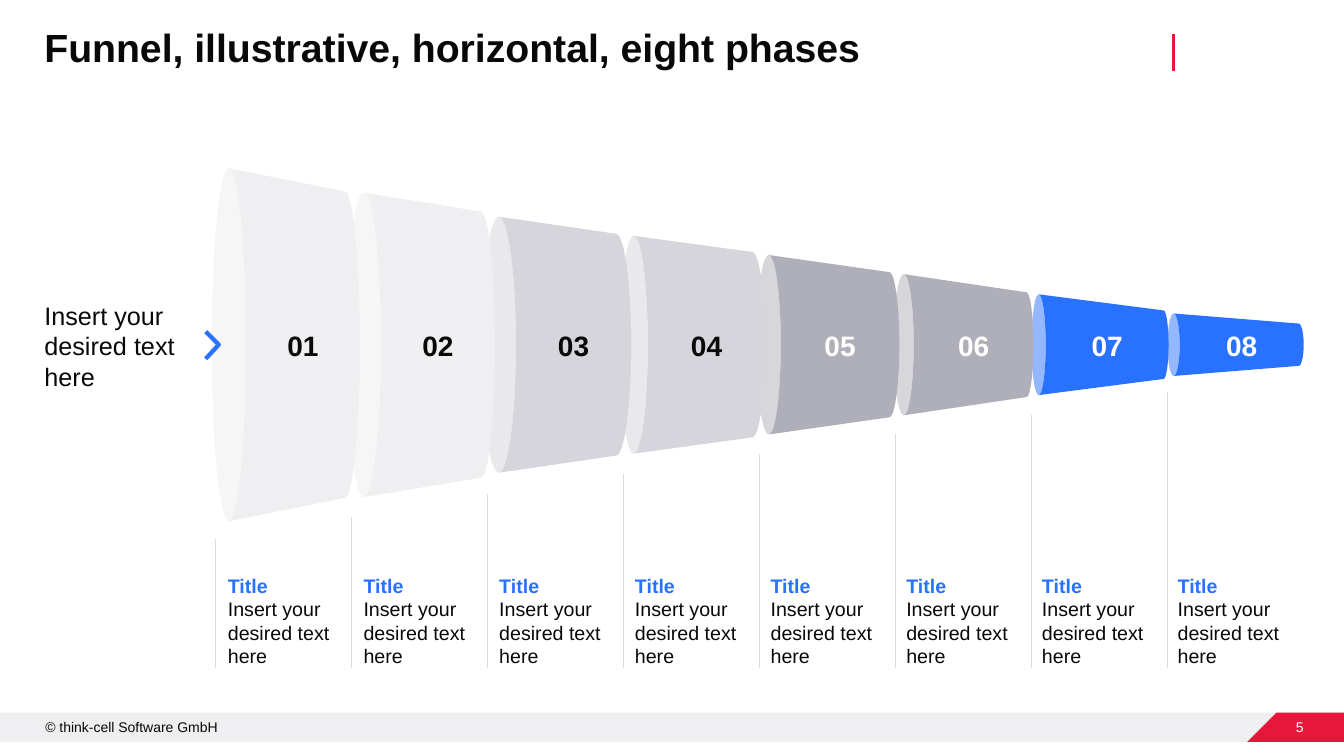
from math import cos, pi, sin

from lxml import etree
from pptx import Presentation
from pptx.dml.color import RGBColor
from pptx.enum.shapes import MSO_CONNECTOR, MSO_SHAPE
from pptx.enum.text import MSO_ANCHOR, MSO_AUTO_SIZE, PP_ALIGN
from pptx.oxml.ns import qn
from pptx.util import Inches, Pt

STRAIGHT = MSO_CONNECTOR.STRAIGHT
OVAL, RECTANGLE = MSO_SHAPE.OVAL, MSO_SHAPE.RECTANGLE
TOP, MIDDLE = MSO_ANCHOR.TOP, MSO_ANCHOR.MIDDLE
LEFT, CENTER, RIGHT = PP_ALIGN.LEFT, PP_ALIGN.CENTER, PP_ALIGN.RIGHT

BLACK = RGBColor(0x08, 0x08, 0x08)
WHITE = RGBColor(0xFF, 0xFF, 0xFF)
BLUE = RGBColor(0x29, 0x72, 0xFF)
RED = RGBColor(0xE9, 0x16, 0x3C)
PALE = RGBColor(0xEF, 0xEF, 0xF1)
LIGHT = RGBColor(0xD5, 0xD5, 0xDB)
MEDIUM = RGBColor(0xAF, 0xAF, 0xB9)
GUIDE = RGBColor(0xDC, 0xDC, 0xDC)

TITLE = "Funnel, illustrative, horizontal, eight phases"
INPUT_TEXT = "Insert your desired text here"
COPYRIGHT = "© think-cell Software GmbH"
PAGE = "5"

# Each phase: number, title, text, fill, number colour,
# mouth half width and half height, end x, end bulge, end half height, guide top
PHASES = [
    ("01", "Title", INPUT_TEXT, PALE, BLACK, 0.17, 1.75, 3.42, 0.15, 1.52, 5.35),
    ("02", "Title", INPUT_TEXT, PALE, BLACK, 0.17, 1.51, 4.77, 0.14, 1.32, 5.13),
    ("03", "Title", INPUT_TEXT, LIGHT, BLACK, 0.17, 1.27, 6.11, 0.15, 1.1, 4.9),
    ("04", "Title", INPUT_TEXT, LIGHT, BLACK, 0.14, 1.08, 7.46, 0.13, 0.92, 4.7),
    ("05", "Title", INPUT_TEXT, MEDIUM, WHITE, 0.12, 0.89, 8.82, 0.1, 0.72, 4.5),
    ("06", "Title", INPUT_TEXT, MEDIUM, WHITE, 0.1, 0.7, 10.18, 0.07, 0.52, 4.31),
    ("07", "Title", INPUT_TEXT, BLUE, WHITE, 0.07, 0.5, 11.54, 0.05, 0.34, 4.12),
    ("08", "Title", INPUT_TEXT, BLUE, WHITE, 0.06, 0.31, 12.88, 0.05, 0.21, 3.89),
]
AXIS_Y = 3.42
MOUTH_FIRST, MOUTH_LAST = 2.27, 11.64
GUIDE_FIRST, GUIDE_LAST, GUIDE_BOTTOM = 2.14, 11.58, 6.63
LABEL_FIRST, LABEL_LAST, LABEL_TOP = 2.26, 11.68, 5.69
ARC_STEPS = 24

prs = Presentation()
prs.slide_width, prs.slide_height = Inches(13.33), Inches(7.5)
slide = prs.slides.add_slide(prs.slide_layouts[5])
shapes = slide.shapes


def spread(first, last, index):
    return first + (last - first) * index / (len(PHASES) - 1)


def write(frame, lines, size, anchor=TOP, align=LEFT, wrap=True):
    """Fill a text frame with (text, colour, bold) lines."""
    frame.margin_left = frame.margin_right = frame.margin_top = frame.margin_bottom = 0
    frame.word_wrap, frame.vertical_anchor = wrap, anchor
    frame.auto_size = MSO_AUTO_SIZE.NONE
    for index, (text, color, bold) in enumerate(lines):
        paragraph = frame.add_paragraph() if index else frame.paragraphs[0]
        paragraph.text, paragraph.alignment = text, align
        font = paragraph.font
        font.name, font.size, font.bold = "Arial", Pt(size), bold
        font.color.rgb = color


def add_text(x, y, width, height, lines, size, **layout):
    box = shapes.add_textbox(Inches(x), Inches(y), Inches(width), Inches(height))
    write(box.text_frame, lines, size, **layout)


def add_line(x, top, bottom, color, width):
    line = shapes.add_connector(STRAIGHT, Inches(x), Inches(top), Inches(x), Inches(bottom))
    line.line.color.rgb, line.line.width = color, Pt(width)
    etree.SubElement(line._element.spPr, qn("a:effectLst"))


def paint(shape, color):
    shape.shadow.inherit = False
    shape.fill.solid()
    shape.fill.fore_color.rgb = color
    shape.line.fill.background()


def outline(points, close=True):
    corners = [(Inches(x), Inches(y)) for x, y in points]
    builder = shapes.build_freeform(*corners[0])
    builder.add_line_segments(corners[1:], close=close)
    return builder.convert_to_shape()


def right_arc(x, half_width, half_height):
    """Right half of an ellipse on the axis, from top to bottom."""
    angles = [pi * step / ARC_STEPS for step in range(ARC_STEPS + 1)]
    return [(x + half_width * sin(a), AXIS_Y - half_height * cos(a)) for a in angles]


def add_mouth(x, half_width, half_height, color):
    mouth = shapes.add_shape(OVAL, Inches(x - half_width), Inches(AXIS_Y - half_height),
                             Inches(2 * half_width), Inches(2 * half_height))
    paint(mouth, color)
    rgb = mouth._element.spPr.find(qn("a:solidFill")).find(qn("a:srgbClr"))
    etree.SubElement(rgb, qn("a:alpha")).set("val", "50000")


# Footer and header mark
paint(shapes.add_shape(RECTANGLE, 0, Inches(7.07), Inches(13.33), Inches(0.29)), PALE)
add_text(0.45, 7.13, 2.46, 0.17, [(COPYRIGHT, BLACK, False)], 10)
add_line(11.64, 0.34, 0.7, RED, 2.25)
paint(outline([(12.66, 7.07), (13.33, 7.07), (13.33, 7.36), (12.37, 7.36)]), RED)
add_text(12.76, 7.13, 0.17, 0.17, [(PAGE, WHITE, False)], 10,
         anchor=MIDDLE, align=RIGHT, wrap=False)

title = shapes.title
title.left, title.top = Inches(0.44), Inches(0.28)
title.width, title.height = Inches(11.03), Inches(0.42)
write(title.text_frame, [(TITLE, BLACK, True)], 28)
title.text_frame.paragraphs[0].line_spacing = 0.9

# Guides and labels below the funnel
for index, (_, heading, text, *_, guide_top) in enumerate(PHASES):
    add_line(spread(GUIDE_FIRST, GUIDE_LAST, index), guide_top, GUIDE_BOTTOM, GUIDE, 0.75)
    add_text(spread(LABEL_FIRST, LABEL_LAST, index), LABEL_TOP, 1.15, 0.94,
             [(heading, BLUE, True), (text, BLACK, False)], 14)

# Funnel, drawn from the narrow end so that wider segments lie in front
for index, phase in reversed(list(enumerate(PHASES))):
    number, _, _, color, number_color, mouth_w, mouth_h, end_x, bulge, end_h, _ = phase
    mouth_x = spread(MOUTH_FIRST, MOUTH_LAST, index)
    paint(outline(right_arc(end_x, bulge, end_h)
                  + right_arc(mouth_x, mouth_w, mouth_h)[::-1]), color)
    add_mouth(mouth_x, mouth_w, mouth_h, color)
    body_left, body_right = mouth_x + mouth_w, end_x + bulge
    add_text(body_left, 3.31, body_right - body_left, 0.24,
             [(number, number_color, True)], 20, anchor=MIDDLE, align=CENTER, wrap=False)

# Input on the left
add_text(0.44, 3, 1.41, 0.86, [(INPUT_TEXT, BLACK, False)], 18, anchor=MIDDLE)
chevron = outline([(2.04, 3.29), (2.17, 3.42), (2.04, 3.56)], close=False)
chevron.shadow.inherit = False
chevron.fill.background()
chevron.line.color.rgb, chevron.line.width = BLUE, Pt(3)

prs.save("out.pptx")
